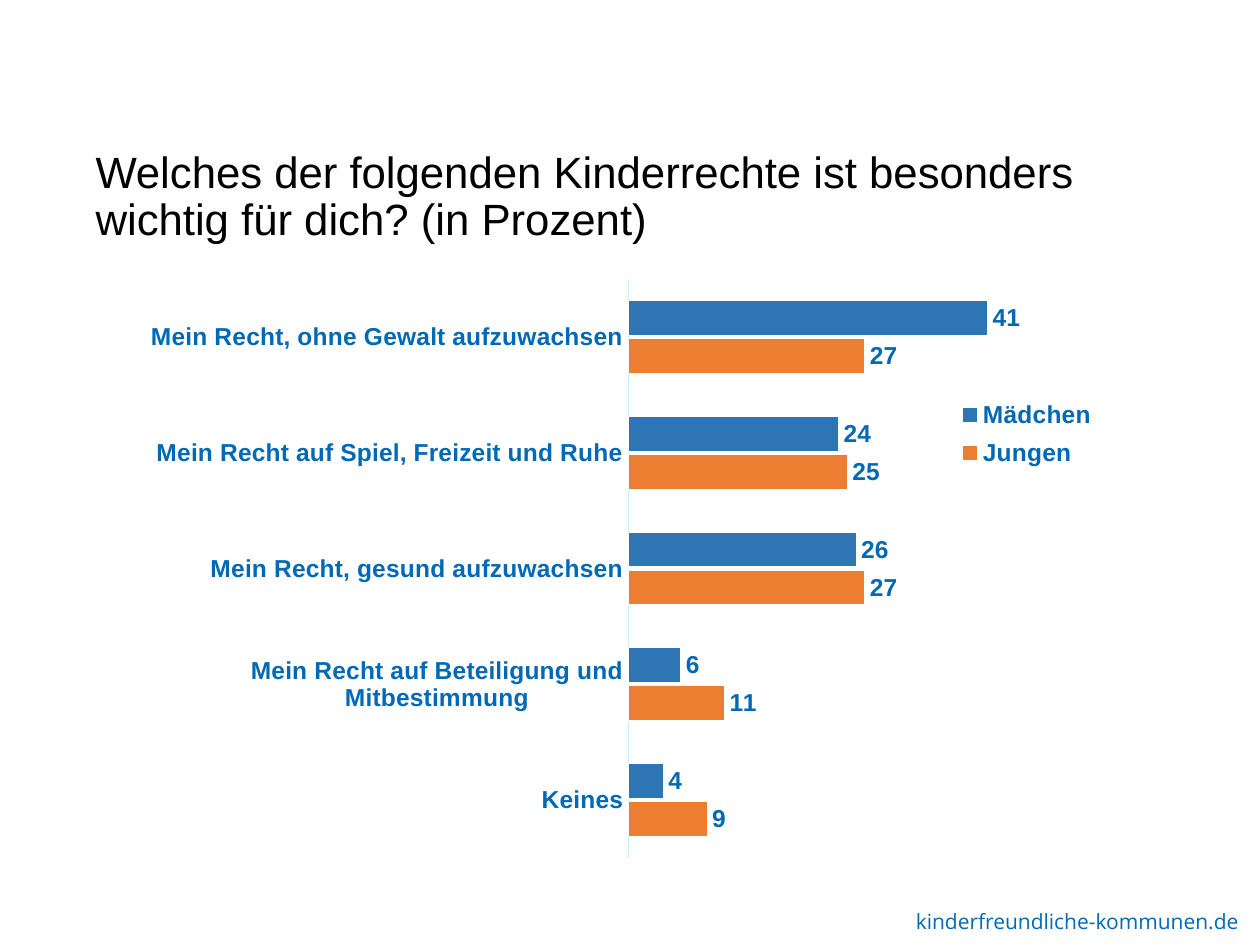
from lxml.etree import SubElement
from pptx import Presentation
from pptx.chart.data import CategoryChartData
from pptx.dml.color import RGBColor
from pptx.enum.chart import XL_CHART_TYPE as ChartType, XL_LABEL_POSITION as LabelPos
from pptx.enum.chart import XL_LEGEND_POSITION as LegendPos, XL_TICK_MARK as Tick
from pptx.oxml.ns import qn
from pptx.util import Inches, Pt

COLORS = {"text": "0069B5", "title": "000000", "axis": "CEEAFF", "border": "FFFFFF",
          "girls": "2E75B6", "boys": "ED7D31"}
CATEGORIES = ["Keines", "Mein Recht auf Beteiligung und Mitbestimmung",
              "Mein Recht, gesund aufzuwachsen", "Mein Recht auf Spiel, Freizeit und Ruhe",
              "Mein Recht, ohne Gewalt aufzuwachsen"]
SERIES = [("Jungen", "boys", (9, 11, 27, 25, 27)),
          ("Mädchen", "girls", (4, 6, 26, 24, 41))]
WIDTH, HEIGHT = Inches(10), Inches(7.5)


def share(x, y, w, h):
    """Turn shares of the slide's size into a box in EMU."""
    return int(x * WIDTH), int(y * HEIGHT), int(w * WIDTH), int(h * HEIGHT)


def rgb(name):
    return RGBColor.from_string(COLORS[name])


def set_font(font, size, color, name="Arial", bold=False):
    font.name, font.size, font.bold = name, Pt(size), bold
    font.color.rgb = rgb(color)


def add_text(s, box, text, wrap=True, spacing=None, **style):
    tf = s.shapes.add_textbox(*box).text_frame
    tf.word_wrap = wrap
    p = tf.paragraphs[0]
    p.line_spacing = spacing
    r = p.add_run()
    r.text = text
    set_font(r.font, **style)


def set_layout(parent, index, x, y, w, h, inner=False):
    """Place a chart part by shares of the chart's size."""
    for old in parent.findall(qn("c:layout")):
        parent.remove(old)
    layout = SubElement(parent, qn("c:layout"))
    parent.insert(index, layout)
    manual = SubElement(layout, qn("c:manualLayout"))
    values = {"xMode": "edge", "yMode": "edge", "x": x, "y": y, "w": w, "h": h}
    if inner:
        values = {"layoutTarget": "inner", **values}
    for tag, value in values.items():
        SubElement(manual, qn(f"c:{tag}")).set("val", str(value))


def style_axes(chart):
    axis = chart.category_axis
    axis.major_tick_mark = axis.minor_tick_mark = Tick.NONE
    axis.format.line.color.rgb = rgb("axis")
    axis.format.line.width = Pt(0.75)
    set_font(axis.tick_labels.font, 14, "text", bold=True)
    values = chart.value_axis
    values.minimum_scale, values.maximum_scale = 0, 45
    values.has_major_gridlines = False
    values.visible = False


def style_series(plot):
    plot.gap_width, plot.overlap = 121, -8
    plot.vary_by_categories = False
    for series, (_, color, _) in zip(plot.series, SERIES):
        series.format.fill.solid()
        series.format.fill.fore_color.rgb = rgb(color)
        series.format.line.color.rgb = rgb("border")
        series.format.line.width = Pt(0.75)
        labels = series.data_labels
        labels.show_value = True
        labels.position = LabelPos.OUTSIDE_END
        set_font(labels.font, 14, "text", bold=True)


def add_rights_chart(s, box):
    data = CategoryChartData()
    data.categories = CATEGORIES
    for name, _, values in SERIES:
        data.add_series(name, values)
    chart = s.shapes.add_chart(ChartType.BAR_CLUSTERED, *box, data).chart
    chart.has_title = False
    set_font(chart.font, 14, "text", bold=True)
    style_axes(chart)
    style_series(chart.plots[0])
    chart.has_legend = True
    legend = chart.legend
    legend.position = LegendPos.TOP
    legend.include_in_layout = False
    set_font(legend.font, 14, "text", bold=True)
    legend_xml = legend._element
    set_layout(legend_xml, 1, 0.82, 0.22, 0.15, 0.14)
    plot_area = chart._chartSpace.chart.plotArea
    set_layout(plot_area, 0, 0.517, 0.039, 0.374, 0.938, inner=True)


def main():
    prs = Presentation()
    prs.slide_width, prs.slide_height = WIDTH, HEIGHT
    s = prs.slides.add_slide(prs.slide_layouts[6])
    add_text(s, share(0.717, 0.955, 0.293, 0.04), "kinderfreundliche-kommunen.de",
             wrap=False, size=12, color="text", name="Open Sans")
    add_text(s, share(0.066, 0.153, 0.862, 0.143),
             "Welches der folgenden Kinderrechte ist besonders wichtig für dich? (in Prozent)",
             spacing=0.9, size=25, color="title")
    add_rights_chart(s, share(0.066, 0.27, 0.837, 0.653))
    prs.save("out.pptx")


if __name__ == "__main__":
    main()
